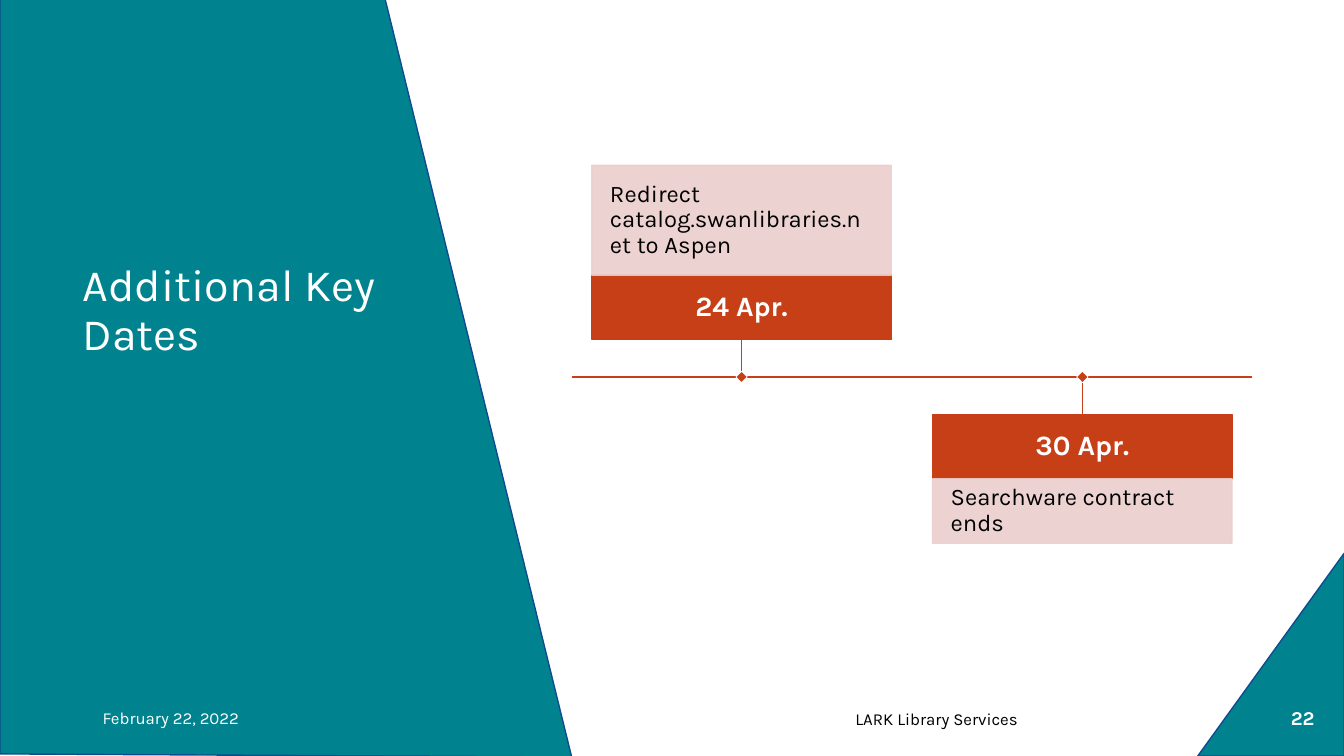
"""Builds the key dates timeline slide."""
import pptx
import pptx.util
import pptx.dml.color
import pptx.enum.shapes
import pptx.enum.text
import pptx.oxml.ns
import lxml.etree

Inches = pptx.util.Inches
Pt = pptx.util.Pt
Kind = pptx.enum.shapes.MSO_SHAPE
Align = pptx.enum.text.PP_ALIGN
Anchor = pptx.enum.text.MSO_ANCHOR
qn = pptx.oxml.ns.qn


class Board:
    font = "Karla"
    hues = {"teal": "00838E", "navy": "104B8E", "rust": "C63F17",
            "pink": "EACFCC", "white": "FFFFFF", "black": "000000"}

    def __init__(self, slide):
        self.slide = slide
        self.shapes = slide.shapes

    def hue(self, name):
        return pptx.dml.color.RGBColor.from_string(self.hues[name])

    def paint(self, shape, fill, edge, width=1, alpha=None):
        shape.shadow.inherit = False
        shape.fill.solid()
        shape.fill.fore_color.rgb = self.hue(fill)
        shape.line.color.rgb = self.hue(edge)
        shape.line.width = Pt(width)
        if alpha:
            for color in shape._element.spPr.iter(qn("a:srgbClr")):
                lxml.etree.SubElement(color, qn("a:alpha"), val=str(alpha * 1000))
        return shape

    def shape(self, kind, box, fill, edge, width=1, alpha=None, turn=0):
        shape = self.shapes.add_shape(kind, *map(Inches, box))
        shape.rotation = turn
        return self.paint(shape, fill, edge, width, alpha)

    def outline(self, points, fill, edge):
        spots = [(Inches(x), Inches(y)) for x, y in points]
        pen = self.shapes.build_freeform(*spots[0])
        pen.add_line_segments(spots[1:], close=True)
        return self.paint(pen.convert_to_shape(), fill, edge)

    def letter(self, shape, text, size, color, align=Align.LEFT, bold=False,
               anchor=Anchor.MIDDLE, inset=None, lead=None):
        frame = shape.text_frame
        frame.word_wrap = True
        frame.vertical_anchor = anchor
        if inset is not None:
            frame.margin_left = frame.margin_right = Inches(inset)
            frame.margin_top = frame.margin_bottom = Inches(inset)
        para = frame.paragraphs[0]
        para.alignment = align
        if lead:
            para.line_spacing = lead
        run = para.add_run()
        run.text = text
        run.font.name = self.font
        run.font.size = Pt(size)
        run.font.bold = bold
        run.font.color.rgb = self.hue(color)

    def label(self, box, text, size, color, **style):
        self.letter(self.shapes.add_textbox(*map(Inches, box)),
                    text, size, color, **style)

    def line(self, start, end, color, width):
        line = self.shapes.add_connector(
            pptx.enum.shapes.MSO_CONNECTOR.STRAIGHT, *map(Inches, start + end))
        line.line.color.rgb = self.hue(color)
        line.line.width = Pt(width)
        lxml.etree.SubElement(line._element.spPr, qn("a:effectLst"))
        return line

    def event(self, left, axis, date, note, tall, above):
        wide, high, stem, dot = 2.97, 0.64, 0.37, 0.08
        mid = left + wide / 2
        top = axis - stem - high if above else axis + stem
        below = top - tall if above else top + high
        card = self.shape(Kind.RECTANGLE, (left, top, wide, high), "rust", "rust")
        self.letter(card, date, 20, "white", align=Align.CENTER, bold=True,
                    inset=0.11, lead=0.9)
        body = self.shape(Kind.RECTANGLE, (left, below, wide, tall),
                          "pink", "pink", alpha=90)
        self.letter(body, note, 17, "black", inset=0.18, lead=0.9)
        edge = top + high if above else top
        link = self.line((mid, edge), (mid, axis), "rust", 0.5)
        link.begin_connect(card, 2 if above else 0)
        self.shape(Kind.RECTANGLE, (mid - dot / 2, axis - dot / 2, dot, dot),
                   "rust", "white", 0.5, turn=45)


def main():
    deck = pptx.Presentation()
    deck.slide_width, deck.slide_height = Inches(13.33), Inches(7.5)
    board = Board(deck.slides.add_slide(deck.slide_layouts[6]))

    board.shape(Kind.RIGHT_TRIANGLE, (11.6, 5.77, 2.01, 1.45),
                "teal", "navy", turn=270)
    board.outline([(0, -0.12), (3.8, -0.09), (5.67, 7.51), (0, 7.48)],
                  "teal", "navy")
    board.label((0.72, 1.87, 3.4, 1.75), "Additional Key Dates", 32, "white",
                anchor=Anchor.BOTTOM, lead=0.9)
    board.label((7.04, 6.93, 4.5, 0.4), "LARK Library Services", 12, "black",
                align=Align.CENTER)
    board.label((12.63, 6.92, 0.58, 0.4), "22", 14, "white",
                align=Align.CENTER, bold=True)
    board.label((0.92, 6.92, 3, 0.4), "February 22, 2022", 12, "white")

    axis = 3.74
    board.line((5.67, axis), (12.42, axis), "rust", 1)
    events = [("24 Apr.", "Redirect catalog.swanlibraries.net to Aspen", 1.09),
              ("30 Apr.", "Searchware contract ends", 0.64)]
    for i, (date, note, tall) in enumerate(events):
        board.event(5.87 + 3.38 * i, axis, date, note, tall, above=i % 2 == 0)

    deck.save("out.pptx")


if __name__ == "__main__":
    main()
